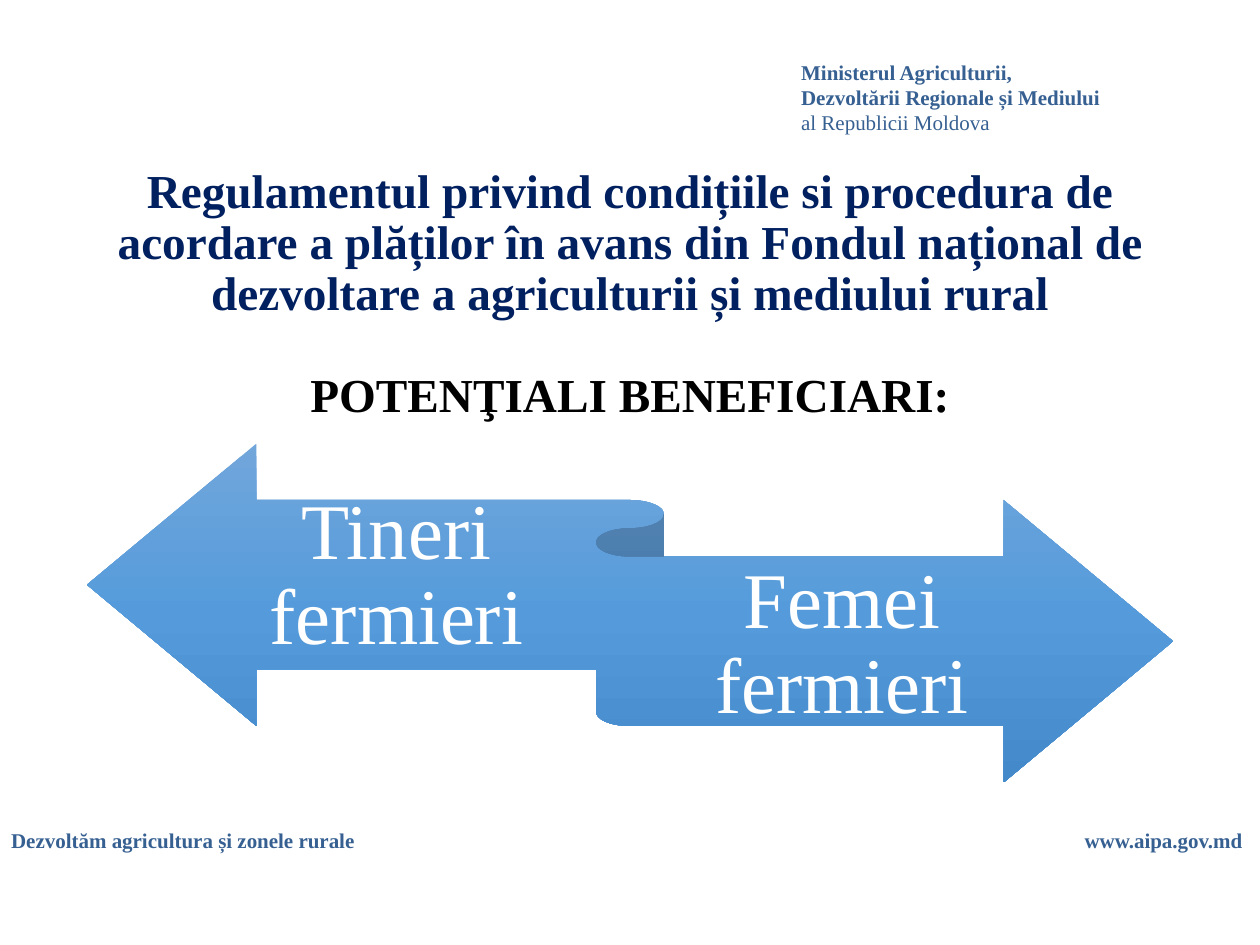
from copy import deepcopy

from pptx import Presentation
from pptx.dml.color import RGBColor
from pptx.enum.shapes import MSO_SHAPE
from pptx.enum.text import MSO_ANCHOR, PP_ALIGN
from pptx.oxml.ns import qn
from pptx.util import Inches, Pt

FONT = "Times New Roman"
BRAND_BLUE, NAVY, BLACK, WHITE = "376092", "002060", "000000", "FFFFFF"
RIBBON_STOPS = [(0, "71A6DB"), (0.5, "559BDB"), (1, "448ACA")]


def color(value):
    return RGBColor.from_string(value)


def add_text(shapes, box, lines, size, align=PP_ALIGN.LEFT, wrap=True):
    """Add a text box; each line is (text, colour, bold)."""
    tf = shapes.add_textbox(*map(Inches, box)).text_frame
    tf.word_wrap = wrap
    for i, (text, line_color, bold) in enumerate(lines):
        p = tf.add_paragraph() if i else tf.paragraphs[0]
        p.text = text
        p.alignment = align
        font = p.runs[0].font
        font.name, font.size, font.bold = FONT, Pt(size), bold
        font.color.rgb = color(line_color)
    return tf


def add_header(slide, box):
    add_text(slide.shapes, box, [
        ("Ministerul Agriculturii, Dezvoltării Regionale și Mediului", BRAND_BLUE, True),
        ("al Republicii Moldova", BRAND_BLUE, False),
    ], 12)


def add_footer(slide, box):
    left, top, width, height = box
    site_width = 1.47
    add_text(slide.shapes, (left, top, 0.6 * width, height),
             [("Dezvoltăm agricultura și zonele rurale", BRAND_BLUE, True)], 12)
    add_text(slide.shapes, (left + width - site_width, top, site_width, height),
             [("www.aipa.gov.md", BRAND_BLUE, True)], 12, PP_ALIGN.CENTER, wrap=False)


def add_title(slide, box):
    tf = add_text(slide.shapes, box, [
        ("Regulamentul privind condițiile si procedura de acordare a plăților în avans "
         "din Fondul național de dezvoltare a agriculturii și mediului rural", NAVY, True),
        ("POTENŢIALI BENEFICIARI:", BLACK, True),
    ], 27, PP_ALIGN.CENTER)
    tf.vertical_anchor = MSO_ANCHOR.MIDDLE
    for p in tf.paragraphs:
        p.line_spacing = 0.9
    tf.paragraphs[1].space_before = Pt(29)


def fill_gradient(s, stops):
    """Fill a shape from top to bottom with three colour stops."""
    s.fill.gradient()
    s.fill.gradient_angle = 270
    stop_list = s._element.spPr.find(".//" + qn("a:gsLst"))
    stop_list.insert(1, deepcopy(stop_list[0]))
    for stop, (position, value) in zip(s.fill.gradient_stops, stops):
        stop.position = position
        stop.color.rgb = color(value)


def add_ribbon(slide, box):
    left, top, width, height = box
    shapes = slide.shapes.add_group_shape().shapes
    ribbon = shapes.add_shape(MSO_SHAPE.LEFT_RIGHT_RIBBON, *map(Inches, box))
    ribbon.shadow.inherit = False
    ribbon.line.fill.background()
    fill_gradient(ribbon, RIBBON_STOPS)

    # Label boxes as shares of the ribbon: left, top, width
    labels = [("Tineri fermieri", 0.12, 0.08, 0.33),
              ("Femei fermieri", 0.5, 0.285, 0.39)]
    for text, x, y, w in labels:
        tf = add_text(shapes, (left + x * width, top + y * height, w * width, 0.63 * height),
                      [(text, WHITE, False)], 45, PP_ALIGN.CENTER)
        tf.vertical_anchor = MSO_ANCHOR.MIDDLE
        tf.margin_left = tf.margin_right = 0
        tf.margin_top, tf.margin_bottom = Inches(0.17), Inches(0.19)
        tf.paragraphs[0].line_spacing = 0.9


def main():
    prs = Presentation()
    prs.slide_width, prs.slide_height = Inches(10), Inches(7.5)
    slide = prs.slides.add_slide(prs.slide_layouts[6])
    add_footer(slide, (-0.01, 6.52, 9.98, 0.3))
    add_header(slide, (6.26, 0.42, 2.69, 0.71))
    add_title(slide, (0.69, 1.09, 8.62, 2.5))
    add_ribbon(slide, (0.69, 3.52, 8.62, 2.69))
    prs.save("out.pptx")


if __name__ == "__main__":
    main()
